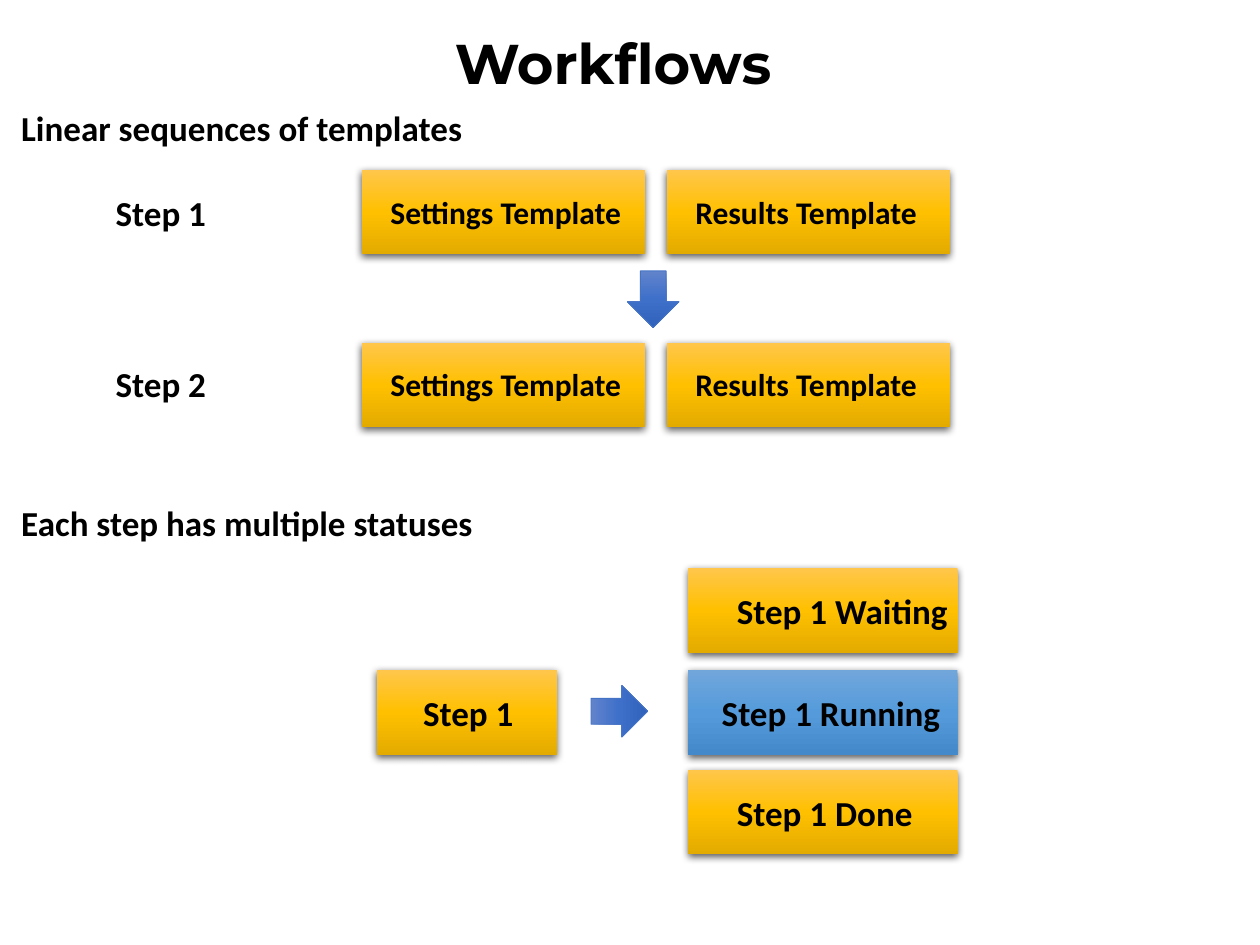
from copy import deepcopy

from pptx import Presentation
from pptx.dml.color import RGBColor
from pptx.enum.shapes import MSO_SHAPE
from pptx.enum.text import MSO_ANCHOR, MSO_AUTO_SIZE, PP_ALIGN
from pptx.oxml import parse_xml
from pptx.oxml.ns import nsdecls, qn
from pptx.util import Inches, Pt

RECTANGLE, DOWN_ARROW = MSO_SHAPE.RECTANGLE, MSO_SHAPE.DOWN_ARROW
TOP, LEFT = MSO_ANCHOR.TOP, PP_ALIGN.LEFT
FIT_SHAPE = MSO_AUTO_SIZE.SHAPE_TO_FIT_TEXT

THEME = {
    "title": {"name": "Montserrat", "size": Pt(32), "bold": True},
    "body": {"name": "Calibri", "size": Pt(20), "bold": True},
    "template": {"name": "Calibri", "size": Pt(18), "bold": True},
    "text": "000000",
    "gold": ("FFC64B", "FFC000", "E3AB00"),
    "blue": ("71A6DB", "559BDB", "448ACA"),
    "arrow": ("6183CB", "3E70CA", "3062BB"),
    "arrow_line": "4472C4",
}
SHADOW = (
    f'<a:outerShdw {nsdecls("a")} blurRad="57150" dist="19050" dir="5400000" '
    'algn="ctr" rotWithShape="0"><a:srgbClr val="000000">'
    '<a:alpha val="63000"/></a:srgbClr></a:outerShdw>'
)
CARD_HEIGHT = 0.67

deck = Presentation()
deck.slide_width, deck.slide_height = Inches(10), Inches(7.5)
page = deck.slides.add_slide(deck.slide_layouts[5])


def write_text(box, text, style, wrap=True):
    frame = box.text_frame
    settings = {"word_wrap": wrap, "auto_size": FIT_SHAPE, "vertical_anchor": TOP}
    for name, value in settings.items():
        setattr(frame, name, value)
    para = frame.paragraphs[0]
    para.alignment = LEFT
    span = para.add_run()
    span.text = text
    for name, value in THEME[style].items():
        setattr(span.font, name, value)
    span.font.color.rgb = RGBColor.from_string(THEME["text"])


def add_gradient_shape(kind, left, top, width, height, colors):
    shape = page.shapes.add_shape(
        kind, Inches(left), Inches(top), Inches(width), Inches(height))
    shape.shadow.inherit = False
    shape.line.fill.background()
    shape.fill.gradient()
    shape.fill.gradient_angle = 270
    # A new gradient has two stops; add the third
    stop_list = shape._element.spPr.find(qn("a:gradFill")).find(qn("a:gsLst"))
    stop_list.append(deepcopy(stop_list[0]))
    for stop, position, color in zip(shape.fill.gradient_stops, (0, 0.5, 1), THEME[colors]):
        stop.position = position
        stop.color.rgb = RGBColor.from_string(color)
    return shape


# Title
title = page.shapes.title
title.left, title.top = Inches(3.51), Inches(0.18)
title.width, title.height = Inches(2.77), Inches(0.64)
write_text(title, "Workflows", "title", wrap=False)

# Cards: left, top, width, colors
template_columns = ((2.87, "Settings Template"), (5.29, "Results Template"))
template_rows = (1.35, 2.72)
cards = [(left, top, 2.25, "gold") for top in template_rows for left, _ in template_columns]
cards += [
    (2.99, 5.32, 1.43, "gold"),
    (5.46, 4.51, 2.14, "gold"),
    (5.46, 5.32, 2.14, "blue"),
    (5.46, 6.11, 2.14, "gold"),
]
for left, top, width, colors in cards:
    card = add_gradient_shape(RECTANGLE, left, top, width, CARD_HEIGHT, colors)
    card._element.spPr.find(qn("a:effectLst")).append(parse_xml(SHADOW))

# Arrows: down between the steps, right towards the statuses
for left, top, rotation in ((4.98, 2.15, 0), (4.71, 5.42, 270)):
    arrow = add_gradient_shape(DOWN_ARROW, left, top, 0.41, 0.45, "arrow")
    arrow.rotation = rotation
    arrow.line.color.rgb = RGBColor.from_string(THEME["arrow_line"])
    arrow.line.width = Pt(0.5)

# Labels: text, left, top, width, height, style
labels = [
    (text, left + 0.13, top + 0.13, 2.29, 0.4, "template")
    for top in template_rows for left, text in template_columns
]
labels += [
    (text, left, top, width, 0.44, "body")
    for text, left, top, width in (
        ("Linear sequences of templates", 0.07, 0.8, 3.93),
        ("Step 1", 0.82, 1.47, 1.96),
        ("Step 2", 0.82, 2.83, 1.96),
        ("Each step has multiple statuses", 0.07, 3.93, 3.93),
        ("Step 1", 3.26, 5.44, 1.96),
        ("Step 1 Waiting", 5.75, 4.63, 1.96),
        ("Step 1 Running", 5.63, 5.44, 1.96),
        ("Step 1 Done", 5.75, 6.23, 1.96),
    )
]
for text, left, top, width, height, style in labels:
    box = page.shapes.add_textbox(Inches(left), Inches(top), Inches(width), Inches(height))
    write_text(box, text, style)

deck.save("out.pptx")
